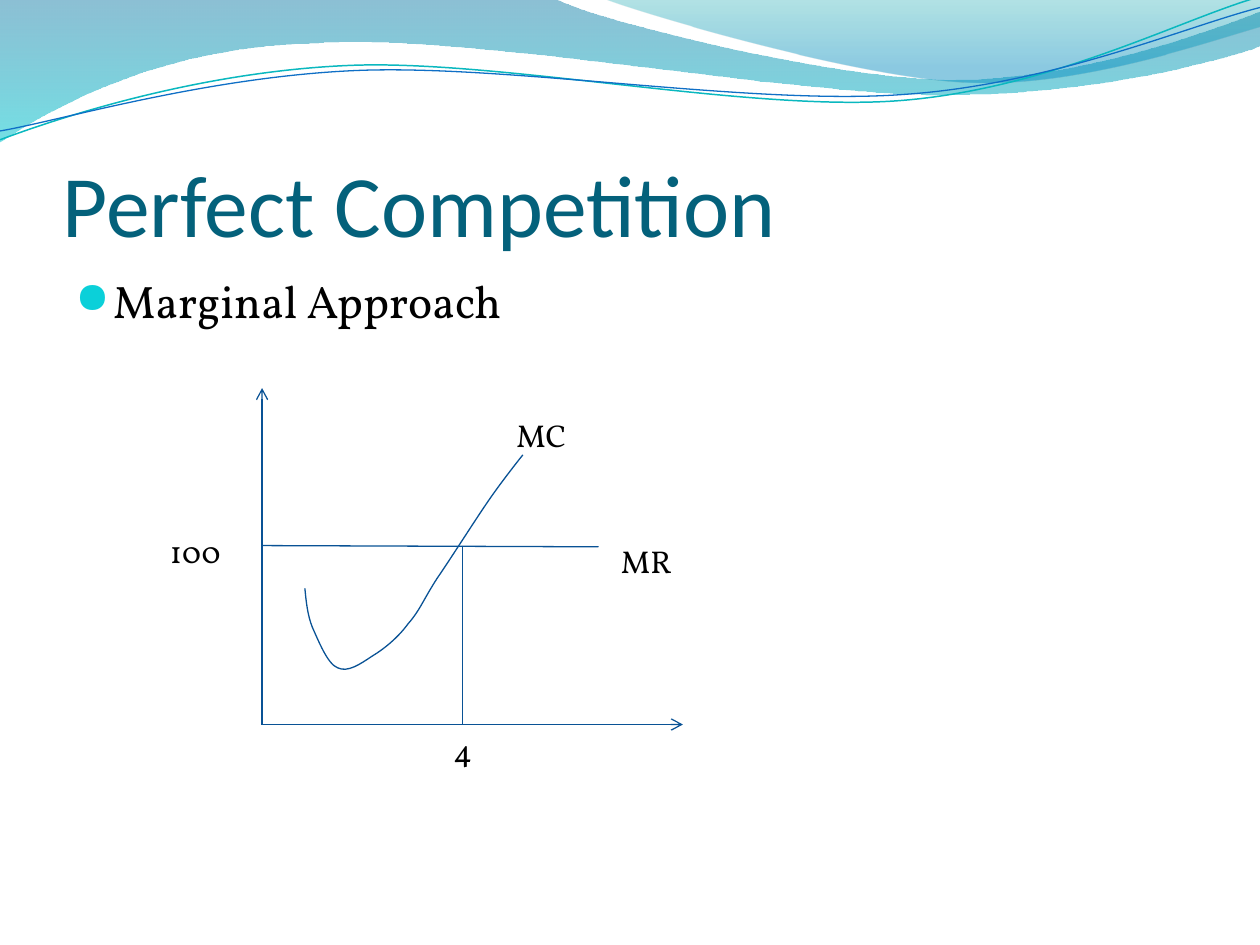
from math import cos, radians, sin

from lxml.etree import SubElement
from pptx import Presentation
from pptx.dml.color import RGBColor
from pptx.enum.shapes import MSO_CONNECTOR as CONN
from pptx.enum.text import MSO_ANCHOR as ANCHOR, MSO_AUTO_SIZE as AUTO
from pptx.oxml.ns import qn
from pptx.util import Inches, Pt

WIDTH, HEIGHT = 10, 7.5
PLOT_LINE = "095295"
TILT = 357.3

BACK_WAVE = [
    (0, 0), (4.4, -0.01),
    (4.76, 0.17, 6.64, 0.63, 7.58, 0.63), (8.53, 0.63, 9.58, 0.26, 10, 0.09),
    (10.01, 0.36),
    (9.83, 0.44, 8.7, 0.76, 7.46, 0.75), (6.22, 0.75, 3.82, 0.28, 2.57, 0.34),
    (1.29, 0.36, 0.46, 0.83, -0.01, 1.13), (0, 0),
]
FRONT_WAVE = [
    (4.79, -0.01),
    (5.09, 0.11, 6.82, 0.62, 7.69, 0.65), (8.56, 0.69, 9.61, 0.32, 10, 0.21),
    (10, 0), (4.79, -0.01),
]
TEAL_STRAND = [
    (0, 1.11),
    (0.48, 0.93, 1.58, 0.57, 2.77, 0.52), (3.95, 0.47, 5.93, 0.89, 7.13, 0.8),
    (8.33, 0.71, 9.38, 0.15, 9.98, -0.02),
]
BLUE_STRAND = [
    (0, 1.04),
    (0.47, 0.96, 1.64, 0.61, 2.83, 0.56), (4.03, 0.51, 5.97, 0.84, 7.17, 0.75),
    (8.36, 0.67, 9.41, 0.21, 10, 0.06),
]
MC_CURVE = [
    (0.34, 1.59),
    (0.35, 1.69, 0.36, 1.8, 0.4, 1.9), (0.45, 2.01, 0.52, 2.19, 0.6, 2.22),
    (0.68, 2.26, 0.78, 2.19, 0.87, 2.13), (0.97, 2.07, 1.08, 1.98, 1.16, 1.87),
    (1.25, 1.77, 1.28, 1.68, 1.39, 1.51), (1.5, 1.35, 1.69, 1.05, 1.8, 0.89),
    (1.91, 0.73, 2.07, 0.53, 2.07, 0.53), (2.07, 0.53),
]


def rgb(value):
    return RGBColor.from_string(value)


def pairs(segment):
    return list(zip(segment[::2], segment[1::2]))


def untilt(segments, center):
    angle = radians(360 - TILT)
    cx, cy = center
    return [tuple(
        value for x, y in pairs(segment) for value in (
            cx + (x - cx) * cos(angle) - (y - cy) * sin(angle),
            cy + (x - cx) * sin(angle) + (y - cy) * cos(angle)))
        for segment in segments]


def add_outline(slide, box, segments, close):
    left, top = box[:2]
    steps = [[(Inches(left + x), Inches(top + y)) for x, y in pairs(segment)]
             for segment in segments]
    builder = slide.shapes.build_freeform(*steps[0][0], scale=1.0)
    builder.add_line_segments([step[-1] for step in steps[1:]], close=close)
    sp = builder.convert_to_shape()
    sp.shadow.inherit = False
    for node, step in zip(list(sp.element.iter(qn("a:lnTo"))), steps[1:]):
        if len(step) == 3:
            node.tag = qn("a:cubicBezTo")
            node.remove(node[0])
            for x, y in step:
                SubElement(node, qn("a:pt"), x=str(x - sp.left), y=str(y - sp.top))
    return sp


def add_curve(slide, box, segments, color, width=0.75):
    sp = add_outline(slide, box, segments, False)
    sp.fill.background()
    sp.line.color.rgb = rgb(color)
    sp.line.width = Pt(width)
    return sp


def add_wave(slide, box, segments, stops):
    sp = add_outline(slide, box, segments, True)
    sp.line.fill.background()
    sp.fill.gradient()
    sp.fill.gradient_angle = 270
    for stop, (position, color, _) in zip(sp.fill.gradient_stops, stops):
        stop.position = position
        stop.color.rgb = rgb(color)
    colors = sp.element.spPr.find(qn("a:gradFill")).iter(qn("a:srgbClr"))
    for clr, (_, _, opacity) in zip(colors, stops):
        SubElement(clr, qn("a:alpha"), val=str(opacity * 1000))


def add_line(slide, start, end, arrow=False):
    line = slide.shapes.add_connector(
        CONN.STRAIGHT, *(Inches(v) for v in (*start, *end)))
    line.line.color.rgb = rgb(PLOT_LINE)
    line.line.width = Pt(0.75)
    if arrow:
        ln = line.element.spPr.find(qn("a:ln"))
        SubElement(ln, qn("a:tailEnd"), type="arrow")
    SubElement(line.element.spPr, qn("a:effectLst"))


def add_text(slide, box, text, size, font="Vollkorn", color="000000", **frame):
    tf = slide.shapes.add_textbox(*(Inches(v) for v in box)).text_frame
    for name, value in {"word_wrap": True, **frame}.items():
        setattr(tf, name, value)
    p = tf.paragraphs[0]
    r = p.add_run()
    r.text = text
    for name, value in {"size": Pt(size), "name": font}.items():
        setattr(r.font, name, value)
    r.font.color.rgb = rgb(color)
    return p


def add_header(slide, box):
    left, top, width, _ = box
    add_wave(slide, box, BACK_WAVE, [(0, "0074A1", 45), (1, "00C6CF", 55)])
    add_wave(slide, box, FRONT_WAVE, [(0, "00A1A9", 30), (0.8, "008BBF", 45)])
    strands = [(TEAL_STRAND, "0AB8BF", 0.85), (BLUE_STRAND, "0F6FC6", 0.75)]
    for segments, color, weight in strands:
        level = untilt(segments, (left + width / 2, top + 0.58))
        add_curve(slide, box, level, color, weight).rotation = TILT


def add_title(slide, box):
    add_text(slide, box, "Perfect Competition", 50, "Calibri", "04617B",
             vertical_anchor=ANCHOR.BOTTOM, margin_left=0, margin_right=0,
             margin_bottom=0)


def add_body(slide, box):
    p = add_text(slide, box, "Marginal Approach", 26)
    p.space_before = Pt(5.2)
    pPr = p._p.get_or_add_pPr()
    pPr.set("marL", str(Inches(0.3)))
    pPr.set("indent", str(-Inches(0.3)))
    SubElement(SubElement(pPr, qn("a:buClr")), qn("a:srgbClr"), val="0BD0D9")
    SubElement(pPr, qn("a:buSzPct"), val="95000")
    SubElement(pPr, qn("a:buFont"), typeface="OpenSymbol")
    SubElement(pPr, qn("a:buChar"), char="●")


def add_cost_graph(slide, box):
    left, top, width, height = box
    bottom = top + height
    price_y, quantity_x = top + 1.25, left + 1.59
    origin = (left, bottom)
    add_line(slide, origin, (left, top), arrow=True)
    add_line(slide, origin, (left + width, bottom), arrow=True)
    add_line(slide, (left, price_y), (left + 2.67, price_y + 0.01))
    add_curve(slide, box, MC_CURVE, PLOT_LINE)
    labels = [
        ("MR", 2.75, 1.17, 0.75, True),
        ("MC", 1.92, 0.17, 0.61, False),
        ("4", 1.42, height, 0.42, True),
        ("100", -0.83, 1.09, 0.67, True),
    ]
    for text, x, y, w, wrap in labels:
        if text == "4":
            add_line(slide, (quantity_x, price_y), (quantity_x, bottom))
        add_text(slide, (left + x, top + y, w, 0.4), text, 18,
                 word_wrap=wrap, auto_size=AUTO.SHAPE_TO_FIT_TEXT)


def main():
    prs = Presentation()
    prs.slide_width, prs.slide_height = Inches(WIDTH), Inches(HEIGHT)
    slide = prs.slides.add_slide(prs.slide_layouts[6])
    add_header(slide, (0, 0, WIDTH, 1.13))
    add_title(slide, (0.5, 0.77, 9, 1.25))
    add_body(slide, (0.5, 2.12, 9, 4.8))
    add_cost_graph(slide, (2.08, 3.08, 3.34, 2.67))
    prs.save("out.pptx")


if __name__ == "__main__":
    main()
